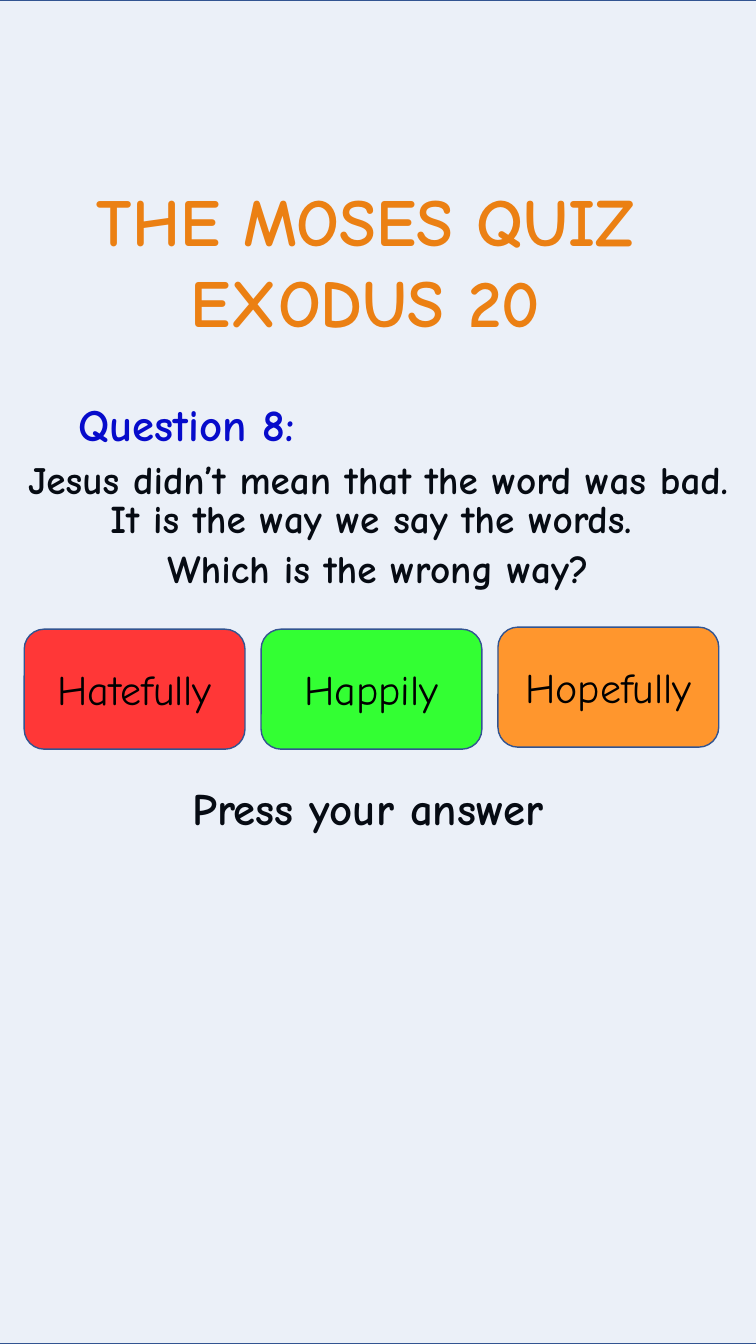
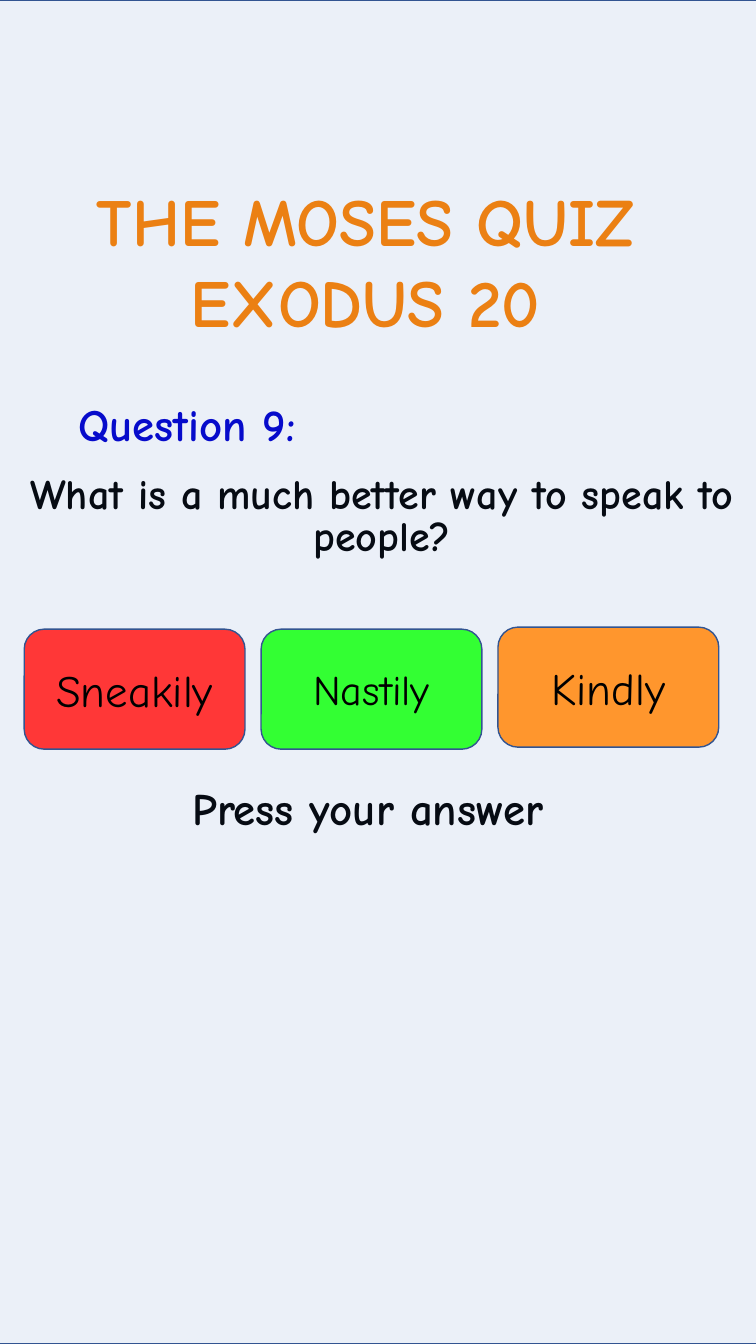
from dataclasses import dataclass

from lxml.etree import SubElement
from pptx import Presentation
from pptx.dml.color import RGBColor
from pptx.enum.shapes import MSO_SHAPE
from pptx.enum.text import MSO_ANCHOR, MSO_AUTO_SIZE, PP_ALIGN
from pptx.oxml.ns import qn
from pptx.util import Inches, Pt


@dataclass(frozen=True)
class Theme:
    font: str = "Comic Neue"
    title: str = "FF8200"
    title_outline: str = "FF0000"
    number: str = "0000CC"
    ink: str = "000000"
    tint: str = "4472C4"
    border: str = "325491"
    buttons: tuple = ("FF3737", "33FF33", "FF962D")
    title_size: int = 48
    label_size: int = 32


THEME = Theme()
WIDTH, HEIGHT = 7.5, 13.33
TITLE_LINES = ("THE MOSES QUIZ ", "EXODUS 20 ")
BUTTON_SIZE = (2.19, 1.19)
BUTTON_PITCH = 2.35
BUTTON_TOPS = (6.24, 6.24, 6.22)

QUESTIONS = [
    {
        "label": "Question 8:",
        "lines": (
            "Jesus didn’t mean that the word was bad. It is the way we say the words. ",
            "Which is the wrong way?",
        ),
        "size": 28,
        "box": (0, 4.54, 7.5, 1.4),
        "answers": (("Hatefully", 30), ("Happily", 30), ("Hopefully", 30)),
    },
    {
        "label": "Question 9:",
        "lines": ("What is a much better way to speak to people?",),
        "size": 30,
        "box": (0.16, 4.67, 7.26, 1.4),
        "answers": (("Sneakily", 32), ("Nastily", 30), ("Kindly", 32)),
    },
]


def inches(box):
    return [Inches(length) for length in box]


def place(shape, box):
    for name, length in zip(("left", "top", "width", "height"), inches(box)):
        setattr(shape, name, length)


def write(shape, lines, size, color, bold=True, wrap=True,
          anchor=MSO_ANCHOR.TOP, **para_format):
    """Fill a shape with one paragraph per line, all in one style."""
    frame = shape.text_frame
    frame.word_wrap = wrap
    frame.auto_size = MSO_AUTO_SIZE.NONE if wrap else MSO_AUTO_SIZE.SHAPE_TO_FIT_TEXT
    frame.vertical_anchor = anchor
    frame.text = "\n".join(lines)
    para_format = {"alignment": PP_ALIGN.CENTER, **para_format}
    span_format = {"name": THEME.font, "size": Pt(size), "bold": bold}
    for para in frame.paragraphs:
        for name, value in para_format.items():
            setattr(para, name, value)
        for span in para.runs:
            for name, value in span_format.items():
                setattr(span.font, name, value)
            span.font.color.rgb = RGBColor.from_string(color)


def outline_text(shape, color, width):
    for para in shape.text_frame.paragraphs:
        for span in para.runs:
            properties = span.font.fill._xPr
            line = SubElement(properties, qn("a:ln"), w=str(Pt(width)))
            fill = SubElement(line, qn("a:solidFill"))
            SubElement(fill, qn("a:srgbClr"), val=color)
            properties.insert(0, line)


def add_panel(page, preset, box, color):
    panel = page.shapes.add_shape(preset, *inches(box))
    panel.shadow.inherit = False
    panel.fill.solid()
    panel.fill.fore_color.rgb = RGBColor.from_string(color)
    panel.line.color.rgb = RGBColor.from_string(THEME.border)
    panel.line.width = Pt(1)
    return panel


def add_title(page, box):
    title = page.shapes.title
    place(title, box)
    write(title, TITLE_LINES, THEME.title_size, THEME.title, wrap=False)
    outline_text(title, THEME.title_outline, 1.06)


def add_question(page, question):
    body = page.placeholders[1]
    place(body, question["box"])
    write(body, question["lines"], question["size"], THEME.ink,
          line_spacing=Pt(question["size"]), space_before=Pt(7.5))


def add_label(page, box, text, color, **text_format):
    label = page.shapes.add_textbox(*inches(box))
    write(label, [text], THEME.label_size, color, **text_format)


def add_tint(page, box):
    """Lay a pale, see-through wash over the page."""
    tint = add_panel(page, MSO_SHAPE.RECTANGLE, box, THEME.tint)
    color = tint.fill._xPr.find(qn("a:solidFill"))[0]
    SubElement(color, qn("a:alpha"), val="10000")


def add_answers(page, left, answers):
    for index, (text, size) in enumerate(answers):
        box = (left + index * BUTTON_PITCH, BUTTON_TOPS[index], *BUTTON_SIZE)
        button = add_panel(page, MSO_SHAPE.ROUNDED_RECTANGLE, box, THEME.buttons[index])
        write(button, [text], size, THEME.ink, bold=False, anchor=MSO_ANCHOR.MIDDLE)


def add_quiz_page(deck, question):
    page = deck.slides.add_slide(deck.slide_layouts[0])
    add_title(page, (0.3, 1.73, 6.89, 1.72))
    add_label(page, (0.47, 3.89, 2.77, 0.64), question["label"], THEME.number, wrap=False)
    add_question(page, question)
    add_label(page, (1.81, 7.75, 4.22, 0.72), "Press your answer", THEME.ink,
              alignment=PP_ALIGN.LEFT, line_spacing=0.9, space_before=Pt(7.5))
    add_tint(page, (-0.24, 0, WIDTH + 0.48, HEIGHT))
    add_answers(page, 0.24, question["answers"])


def main():
    deck = Presentation()
    deck.slide_width, deck.slide_height = Inches(WIDTH), Inches(HEIGHT)
    for question in QUESTIONS:
        add_quiz_page(deck, question)
    deck.save("out.pptx")


if __name__ == "__main__":
    main()
